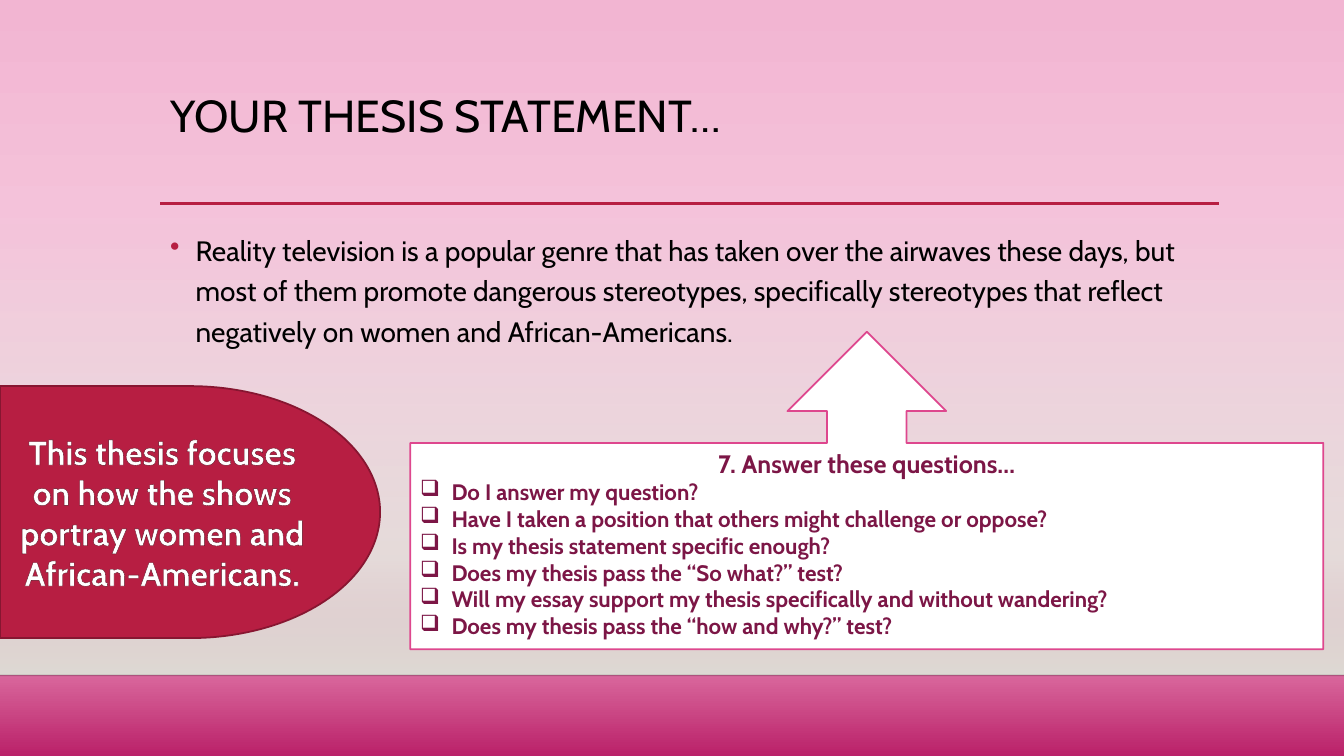
import pptx
import pptx.dml.color
import pptx.enum.shapes
import pptx.enum.text
import pptx.oxml
import pptx.oxml.ns
import pptx.util
from lxml import etree

Cm = pptx.util.Cm
Pt = pptx.util.Pt
SHAPE = pptx.enum.shapes.MSO_SHAPE
ALIGN = pptx.enum.text.PP_ALIGN
ANCHOR = pptx.enum.text.MSO_ANCHOR
qn = pptx.oxml.ns.qn


def rgb(value):
    return pptx.dml.color.RGBColor.from_string(value)


def add_node(parent, tag, **attributes):
    """Append a DrawingML element and return it."""
    return etree.SubElement(parent, qn(tag), attributes)


presentation = pptx.Presentation()
presentation.slide_width = Cm(33.87)
presentation.slide_height = Cm(19.05)
slide = presentation.slides.add_slide(presentation.slide_layouts[6])
shapes = slide.shapes

# Background and the fading panel over it: stops are position, colour, opacity
panel = shapes.add_shape(SHAPE.RECTANGLE, 0, Cm(5.61), Cm(33.87), Cm(11.4))
panel.shadow.inherit = False
panel.line.fill.background()
gradients = [
    (slide.background.fill, slide.background._cSld,
     [(0, "F2B5D2", 100), (74, "F8DAE8", 100), (83, "EB91BB", 100), (100, "BA2169", 100)]),
    (panel.fill, panel._element, [(0, "DFDBD5", 0), (100, "DFDBD5", 100)]),
]
for fill, owner, stops in gradients:
    fill.gradient()
    fill.gradient_angle = 270
    stop_list = next(owner.iter(qn("a:gsLst")))
    for old_stop in list(stop_list):
        stop_list.remove(old_stop)
    for position, color, opacity in stops:
        stop = add_node(stop_list, "a:gs", pos=str(position * 1000))
        stop_color = add_node(stop, "a:srgbClr", val=color)
        add_node(stop_color, "a:alpha", val=str(opacity * 1000))

# Rules: left, right, height, colour, width, opacity
for left, right, top, color, width, opacity in [
    (0, 33.87, 17.02, "000001", 1, 20),
    (4.04, 30.73, 5.13, "B71E42", 2.5, 100),
]:
    rule = shapes.add_connector(
        pptx.enum.shapes.MSO_CONNECTOR.STRAIGHT, Cm(left), Cm(top), Cm(right), Cm(top))
    rule.line.color.rgb = rgb(color)
    rule.line.width = Pt(width)
    add_node(next(rule._element.iter(qn("a:srgbClr"))), "a:alpha", val=str(opacity * 1000))
    add_node(rule._element.spPr, "a:effectLst")

title = shapes.add_textbox(Cm(4.04), Cm(2.24), Cm(26.67), Cm(2.92))
body = shapes.add_textbox(Cm(4.04), Cm(5.59), Cm(26.67), Cm(9.58))
callout = shapes.add_shape(SHAPE.UP_ARROW_CALLOUT, Cm(10.34), Cm(8.36), Cm(23.01), Cm(8))
focus = shapes.add_shape(SHAPE.FLOWCHART_DELAY, 0, Cm(9.73), Cm(9.58), Cm(6.35))
for shape, fill_color, line_color in [
    (callout, "FFFFFF", "DE478E"),
    (focus, "B71E42", "871631"),
]:
    shape.shadow.inherit = False
    shape.fill.solid()
    shape.fill.fore_color.rgb = rgb(fill_color)
    shape.line.color.rgb = rgb(line_color)
    shape.line.width = Pt(1.25)

questions = [
    "Do I answer my question?",
    "Have I taken a position that others might challenge or oppose?",
    "Is my thesis statement specific enough?",
    "Does my thesis pass the “So what?” test?",
    "Will my essay support my thesis specifically and without wandering?",
    "Does my thesis pass the “how and why?” test?",
]
plain = {"color": "000000", "bold": False, "align": ALIGN.LEFT}
plum = {"color": "7C1646", "bold": True}
checkbox = {"size": 16, "align": ALIGN.LEFT, "bullet": "❑", "indent": 0.79, **plum}
contents = [
    (title, ANCHOR.TOP,
     [("YOUR THESIS STATEMENT…", {"size": 32, "spacing": 0.9, **plain})]),
    (body, ANCHOR.TOP,
     [("Reality television is a popular genre that has taken over the airwaves these days, "
       "but most of them promote dangerous stereotypes, specifically stereotypes that "
       "reflect negatively on women and African-Americans.",
       {"size": 20, "spacing": 1.2, "bullet": "•", "bullet_color": "B71E42",
        "indent": 0.64, **plain})]),
    (callout, ANCHOR.TOP,
     [("7. Answer these questions…", {"size": 18, "align": ALIGN.CENTER, **plum})]
     + [(question, checkbox) for question in questions]),
    (focus, ANCHOR.MIDDLE,
     [("This thesis focuses on how the shows portray women and African-Americans.",
       {"size": 24, "color": "FFFFFF", "bold": True, "align": ALIGN.CENTER,
        "outline": "5C0F21"})]),
]
for shape, anchor, paragraphs in contents:
    frame = shape.text_frame
    frame.word_wrap = True
    frame.vertical_anchor = anchor
    for index, (text, style) in enumerate(paragraphs):
        paragraph = frame.add_paragraph() if index else frame.paragraphs[0]
        paragraph.alignment = style["align"]
        paragraph.line_spacing = style.get("spacing", 1.0)
        if "bullet" in style:
            properties = paragraph._p.get_or_add_pPr()
            indent = Cm(style["indent"])
            properties.set("marL", str(indent))
            properties.set("indent", str(-indent))
            if "bullet_color" in style:
                bullet_color = add_node(properties, "a:buClr")
                add_node(bullet_color, "a:srgbClr", val=style["bullet_color"])
            add_node(properties, "a:buChar", char=style["bullet"])
        run = paragraph.add_run()
        run.text = text
        font_format = {"name": "Cabin", "size": Pt(style["size"]), "bold": style["bold"]}
        for name, value in font_format.items():
            setattr(run.font, name, value)
        run.font.color.rgb = rgb(style["color"])
        if "outline" in style:
            outline = etree.Element(qn("a:ln"), w=str(Pt(0.8)))
            outline_fill = add_node(outline, "a:solidFill")
            add_node(outline_fill, "a:srgbClr", val=style["outline"])
            run._r.get_or_add_rPr().insert(0, outline)

presentation.save("out.pptx")
